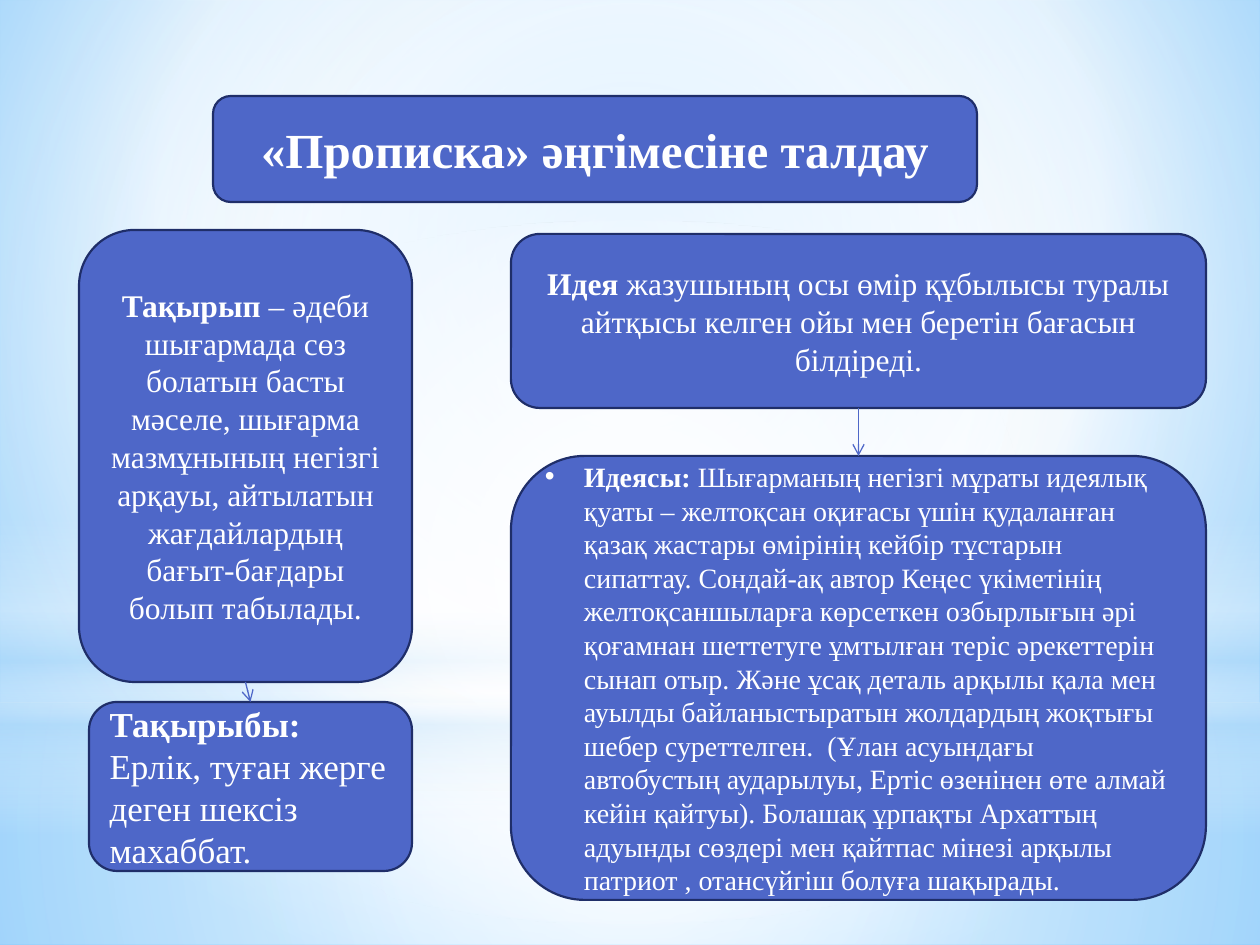
from lxml import etree
from pptx import Presentation
from pptx.dml.color import RGBColor
from pptx.enum.shapes import MSO_CONNECTOR as Connector, MSO_SHAPE as Shape
from pptx.enum.text import MSO_ANCHOR as Anchor, MSO_AUTO_SIZE as AutoSize, PP_ALIGN as Align
from pptx.oxml import parse_xml
from pptx.oxml.ns import nsdecls, qn
from pptx.util import Emu, Pt

SCALE = 914400 / 126
WIDTH, HEIGHT = 1260, 945
BOTTOM, TOP = 2, 0


def px(length):
    """Turn whole pixels into EMU."""
    return Emu(round(length * SCALE))


def color(value):
    """Turn a hex string into a colour."""
    return RGBColor.from_string(value)


def place(shape, left, top, width, height):
    """Set the frame of a shape in pixels."""
    shape.left, shape.top = px(left), px(top)
    shape.width, shape.height = px(width), px(height)


def paint_gradient(owner, element, stops, center=None):
    """Fill a shape or background with a circular or downward gradient."""
    owner.fill.solid()
    solid = element.find(".//" + qn("a:solidFill"))
    marks = "".join(
        f'<a:gs pos="{position * 1000}"><a:srgbClr val="{value}">'
        f'<a:alpha val="{opacity * 1000}"/></a:srgbClr></a:gs>'
        for position, value, opacity in stops
    )
    direction = '<a:lin ang="5400000" scaled="0"/>'
    if center:
        sides = " ".join(f'{side}="{part * 1000}"' for side, part in zip("ltrb", center))
        direction = f'<a:path path="circle"><a:fillToRect {sides}/></a:path>'
    gradient = parse_xml(
        f'<a:gradFill {nsdecls("a")} rotWithShape="1"><a:gsLst>{marks}</a:gsLst>{direction}</a:gradFill>'
    )
    solid.getparent().replace(solid, gradient)


def write(shape, text, lead="", size=18, align=Align.CENTER, bold=False,
          font="Times New Roman", ink="FFFFFF", bullet_indent=0):
    """Write one paragraph with an optional bold lead into a shape."""
    frame = shape.text_frame
    frame.word_wrap = True
    frame.auto_size = AutoSize.NONE
    frame.vertical_anchor = Anchor.MIDDLE
    paragraph = frame.paragraphs[0]
    paragraph.alignment = align
    paragraph.space_before = Pt(0)
    for part, heavy in ((lead, True), (text, bold)):
        if part:
            run = paragraph.add_run()
            run.text = part
            run.font.name, run.font.size, run.font.bold = font, Pt(size), heavy
            run.font.color.rgb = color(ink)
    if bullet_indent:
        properties = paragraph._p.get_or_add_pPr()
        properties.set("marL", str(px(bullet_indent)))
        properties.set("indent", str(-px(bullet_indent)))
        etree.SubElement(properties, qn("a:buFont")).set("typeface", "Arial")
        etree.SubElement(properties, qn("a:buChar")).set("char", "•")


class Deck:
    """Holds the style and the current slide."""

    fill, edge = "4E67C8", "1F2E69"

    def __init__(self):
        """Start a presentation with one title and content slide."""
        self.presentation = Presentation()
        self.presentation.slide_width, self.presentation.slide_height = px(WIDTH), px(HEIGHT)
        self.slide = self.presentation.slides.add_slide(self.presentation.slide_layouts[1])

    def backdrop(self, stops, center):
        """Paint the slide background."""
        paint_gradient(self.slide.background, self.slide.element, stops, center)

    def glow(self, kind, top, height, stops, center=None):
        """Add a full-width translucent shape."""
        shape = self.slide.shapes.add_shape(kind, 0, px(top), px(WIDTH), px(height))
        shape.shadow.inherit = False
        shape.line.fill.background()
        paint_gradient(shape, shape.element, stops, center)

    def box(self, frame, text="", **style):
        """Add a rounded box, with text if given."""
        shape = self.slide.shapes.add_shape(Shape.ROUNDED_RECTANGLE, *map(px, frame))
        shape.shadow.inherit = False
        shape.fill.solid()
        shape.fill.fore_color.rgb = color(self.fill)
        shape.line.color.rgb = color(self.edge)
        shape.line.width = Pt(1.25)
        if text:
            write(shape, text, **style)
        return shape

    def placeholder_box(self, index, frame, text, side_margin, **style):
        """Add a rounded box with a layout placeholder in front of it."""
        box = self.box(frame)
        holder = self.slide.placeholders[index]
        place(holder, *frame)
        write(holder, text, **style)
        text_frame = holder.text_frame
        text_frame.margin_left = text_frame.margin_right = px(side_margin)
        text_frame.margin_top = text_frame.margin_bottom = 0
        box.element.addnext(holder.element)
        return box

    def arrow(self, start, end):
        """Join the bottom of one box to the top of another."""
        connector = self.slide.shapes.add_connector(Connector.STRAIGHT, 0, 0, 0, 0)
        connector.begin_connect(start, BOTTOM)
        connector.end_connect(end, TOP)
        connector.line.color.rgb = color(self.fill)
        connector.line.width = Pt(0.75)
        line = connector.element.spPr.find(qn("a:ln"))
        etree.SubElement(line, qn("a:tailEnd")).set("type", "arrow")
        etree.SubElement(connector.element.spPr, qn("a:effectLst"))


def main():
    """Build the slide and save it."""
    deck = Deck()
    white, sky = "FFFFFF", "B4DCFA"
    middle = (50, 50, 50, 50)
    deck.backdrop([(0, "9ED5FF", 100), (60, white, 100), (100, "5BB9FF", 100)], (20, 10, 20, 60))
    deck.glow(Shape.RECTANGLE, 703, 242, [(0, white, 91), (37, white, 76), (100, sky, 79)], middle)
    deck.glow(Shape.RECTANGLE, 0, 703, [(0, white, 89), (48, white, 62), (100, sky, 79)], middle)
    deck.glow(Shape.RECTANGLE, 519, 315, [(0, white, 0), (29, white, 30), (45, sky, 40),
                                          (55, white, 26), (65, sky, 60), (100, white, 0)])
    deck.glow(Shape.OVAL, 221, 703, [(0, white, 100), (56, white, 0)], middle)

    deck.placeholder_box(0, (213, 96, 764, 106), "«Прописка» әңгімесіне талдау", 18,
                         size=28, bold=True)
    idea = deck.box(
        (511, 234, 695, 174),
        "жазушының осы өмір құбылысы туралы айтқысы келген ойы мен беретін бағасын білдіреді.",
        lead="Идея ")
    topic = deck.box(
        (79, 230, 333, 452),
        " – әдеби шығармада сөз болатын басты мәселе, шығарма мазмұнының негізгі арқауы, "
        "айтылатын жағдайлардың бағыт-бағдары болып табылады.",
        lead="Тақырып")
    story_idea = deck.placeholder_box(
        1, (511, 456, 695, 444),
        "Шығарманың негізгі мұраты идеялық қуаты – желтоқсан оқиғасы үшін қудаланған "
        "қазақ жастары өмірінің кейбір тұстарын сипаттау. Сондай-ақ автор Кеңес үкіметінің "
        "желтоқсаншыларға көрсеткен озбырлығын әрі қоғамнан шеттетуге ұмтылған теріс "
        "әрекеттерін сынап отыр. Және ұсақ деталь арқылы қала мен ауылды байланыстыратын "
        "жолдардың жоқтығы шебер суреттелген.  (Ұлан асуындағы автобустың аударылуы, Ертіс "
        "өзенінен өте алмай кейін қайтуы). Болашақ ұрпақты Архаттың адуынды сөздері мен "
        "қайтпас мінезі арқылы  патриот , отансүйгіш болуға шақырады.",
        34, lead="Идеясы: ", size=16, align=Align.LEFT, bullet_indent=39)
    story_topic = deck.box(
        (89, 702, 323, 169), " Ерлік, туған жерге деген шексіз махаббат.",
        lead="Тақырыбы:", size=20, align=Align.LEFT)
    deck.arrow(topic, story_topic)
    deck.arrow(idea, story_idea)
    deck.presentation.save("out.pptx")


if __name__ == "__main__":
    main()
